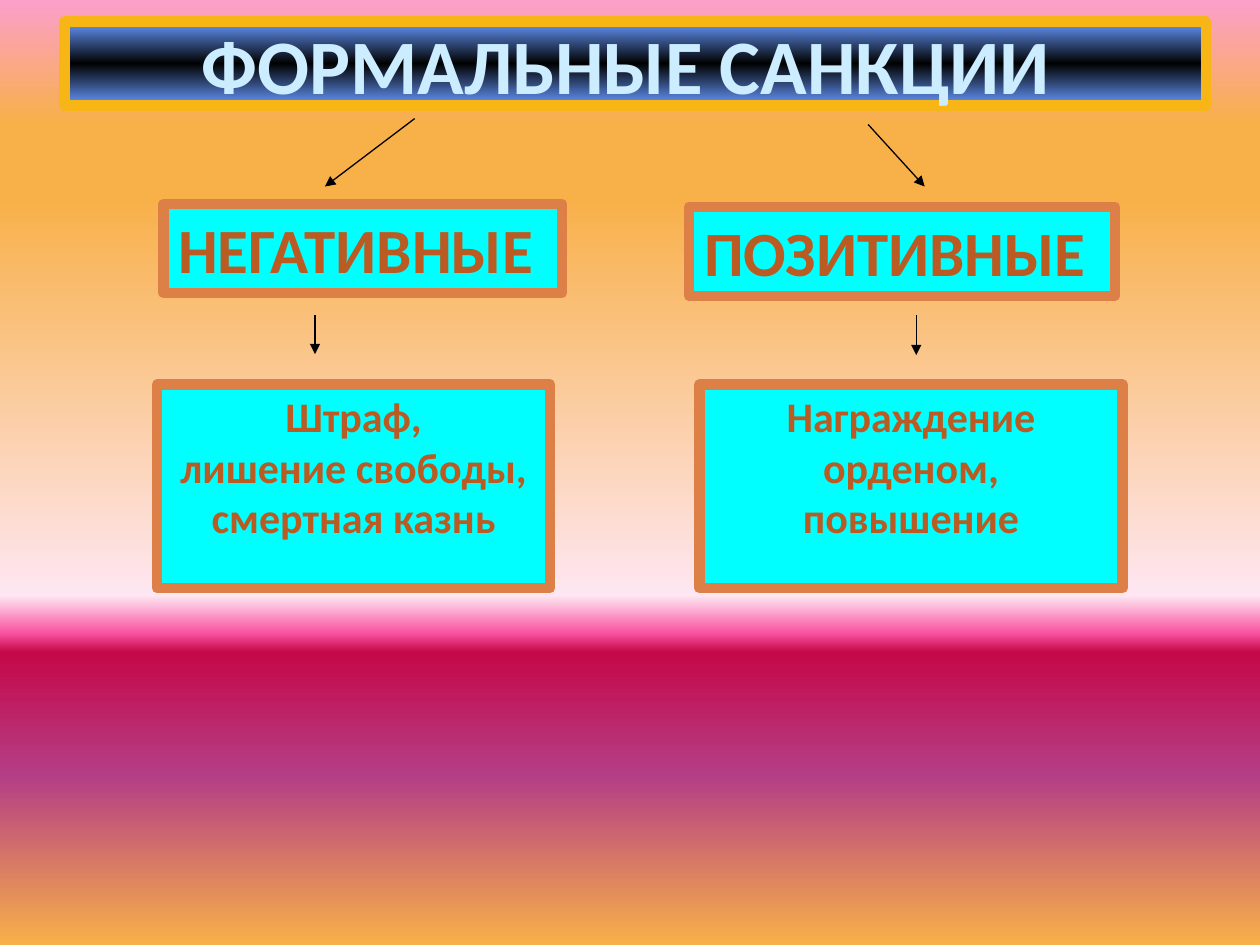
from lxml import etree
from pptx import Presentation
from pptx.dml.color import RGBColor
from pptx.enum.shapes import MSO_CONNECTOR, MSO_SHAPE
from pptx.enum.text import MSO_ANCHOR, MSO_AUTO_SIZE, PP_ALIGN
from pptx.oxml.ns import qn
from pptx.util import Cm, Pt

RECTANGLE = MSO_SHAPE.RECTANGLE
STRAIGHT = MSO_CONNECTOR.STRAIGHT
TOP, MIDDLE = MSO_ANCHOR.TOP, MSO_ANCHOR.MIDDLE
CENTER = PP_ALIGN.CENTER
NO_AUTOFIT = MSO_AUTO_SIZE.NONE

COLORS = {
    "title": "CCECFF", "title_border": "F7B615",
    "box": "00FFFF", "box_border": "DD8047", "box_text": "B95B22",
    "arrow": "000000",
}
BACKGROUND_STOPS = [
    (0, "FC9FCB"), (13, "F8B049"), (21, "F8B049"), (63, "FEE7F2"),
    (67, "F952A0"), (69, "C50849"), (82, "B43E85"), (100, "F8B049"),
]
TITLE_STOPS = [(0, "6699FF"), (50, "000000"), (100, "6699FF")]

# Content: positions are left, top, width, height in centimetres
TITLE = "ФОРМАЛЬНЫЕ САНКЦИИ "
TITLE_AREA = (1.3, 0.43, 23.01, 1.7)
BRANCHES = [
    {
        "heading": "НЕГАТИВНЫЕ ", "heading_area": (3.3, 4.11, 8.03, 1.8),
        "examples": ["Штраф,", "лишение свободы, смертная казнь"],
        "examples_area": (3.17, 7.75, 7.92, 4.11),
        "arrows": [(8.36, 2.39, 6.55, 3.76), (6.35, 6.35, 6.35, 7.14)],
    },
    {
        "heading": "ПОЗИТИВНЫЕ ", "heading_area": (13.89, 4.17, 8.59, 1.8),
        "examples": ["Награждение орденом, повышение"],
        "examples_area": (14.1, 7.75, 8.53, 4.11),
        "arrows": [(17.5, 2.51, 18.64, 3.76), (18.47, 6.35, 18.47, 7.16)],
    },
]


def set_gradient(fill, element, stops):
    """Fill from top to bottom with the given (percent, colour) stops."""
    fill.gradient()
    fill.gradient_angle = 270
    stop_list = element.xpath(".//a:gsLst")[0]
    for stop in list(stop_list):
        stop_list.remove(stop)
    for percent, color in stops:
        stop = etree.SubElement(stop_list, qn("a:gs"), pos=str(percent * 1000))
        etree.SubElement(stop, qn("a:srgbClr"), val=color)


def set_border(shape, color):
    shape.line.color.rgb = RGBColor.from_string(color)
    shape.line.width = Pt(6)


def write_text(shape, lines, size, color, anchor=TOP, wrap=True):
    frame = shape.text_frame
    frame.auto_size = NO_AUTOFIT
    frame.word_wrap = wrap
    frame.vertical_anchor = anchor
    frame.text = "\n".join(lines)
    for paragraph in frame.paragraphs:
        paragraph.alignment = CENTER
        font = paragraph.runs[0].font
        font.name, font.size, font.bold = "Calibri", Pt(size), True
        font.color.rgb = RGBColor.from_string(color)


def add_box(slide, area, lines, size, wrap=True):
    shape = slide.shapes.add_shape(RECTANGLE, *map(Cm, area))
    shape.shadow.inherit = False
    shape.fill.solid()
    shape.fill.fore_color.rgb = RGBColor.from_string(COLORS["box"])
    set_border(shape, COLORS["box_border"])
    write_text(shape, lines, size, COLORS["box_text"], wrap=wrap)


def add_arrow(slide, ends):
    arrow = slide.shapes.add_connector(STRAIGHT, *map(Cm, ends))
    arrow.line.color.rgb = RGBColor.from_string(COLORS["arrow"])
    arrow.line.width = Pt(0.75)
    line = arrow.element.spPr.find(qn("a:ln"))
    etree.SubElement(line, qn("a:tailEnd"), type="triangle")
    etree.SubElement(arrow.element.spPr, qn("a:effectLst"))


def main():
    presentation = Presentation()
    presentation.slide_width, presentation.slide_height = Cm(25.4), Cm(19.05)
    slide = presentation.slides.add_slide(presentation.slide_layouts[5])
    set_gradient(slide.background.fill, slide.element, BACKGROUND_STOPS)

    # Title bar
    title = slide.shapes.title
    title.left, title.top, title.width, title.height = map(Cm, TITLE_AREA)
    set_gradient(title.fill, title.element, TITLE_STOPS)
    set_border(title, COLORS["title_border"])
    write_text(title, [TITLE], 44, COLORS["title"], anchor=MIDDLE)

    # Two branches: heading, examples and the arrows leading to them
    for branch in BRANCHES:
        add_box(slide, branch["heading_area"], [branch["heading"]], 36, wrap=False)
        add_box(slide, branch["examples_area"], branch["examples"], 24)
        for ends in branch["arrows"]:
            add_arrow(slide, ends)

    presentation.save("out.pptx")


if __name__ == "__main__":
    main()
